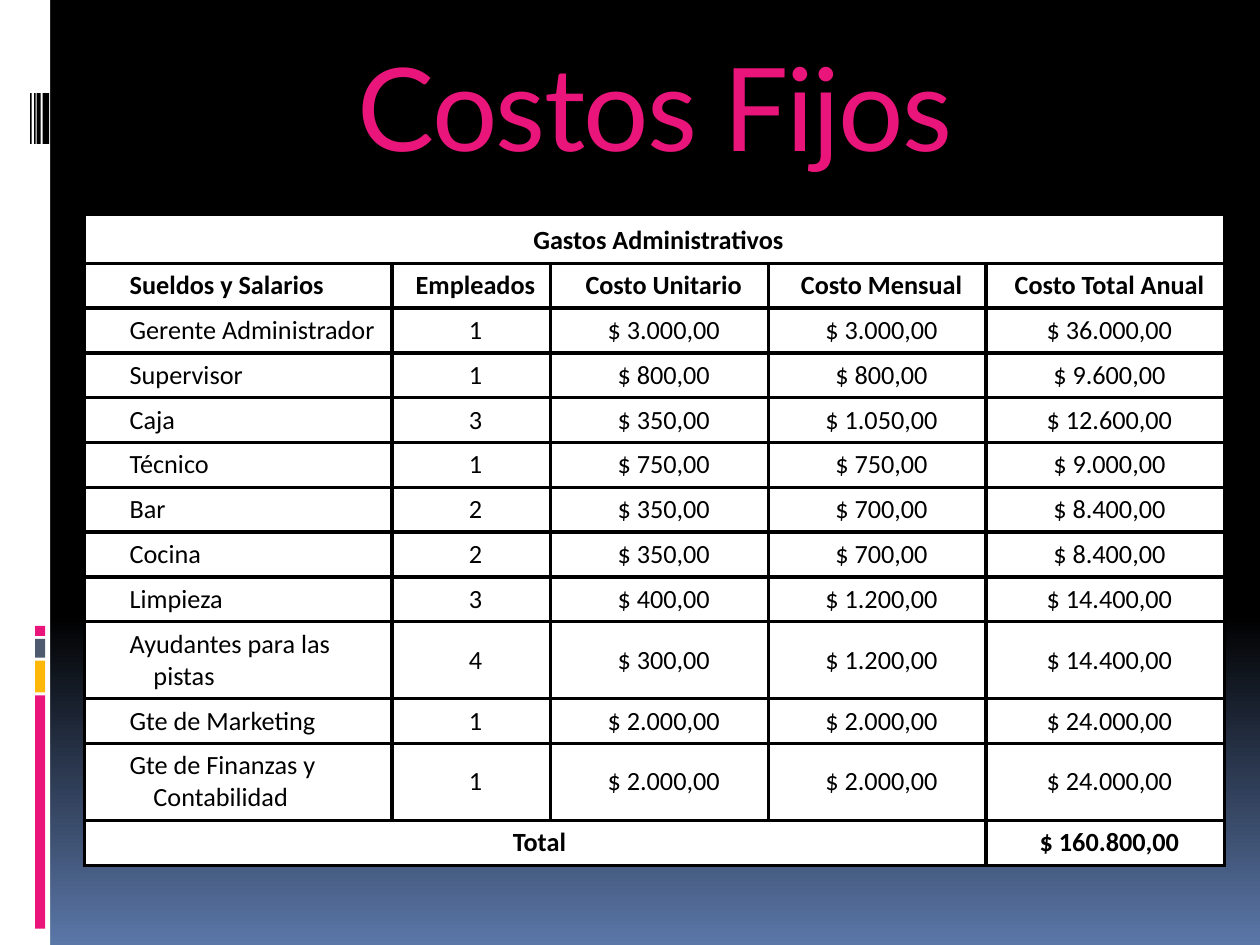
import copy

from lxml import etree
from pptx import Presentation
from pptx.dml.color import RGBColor
from pptx.enum import shapes, text
from pptx.oxml import ns
from pptx.util import Cm, Pt

COLORS = {
    "black": "000000",
    "white": "FFFFFF",
    "pink": "EA157A",
    "amber": "FEB80A",
    "slate": "4E5B6F",
    "blue": "5B77A8",
}

# Position name, number of employees, monthly cost of each one
STAFF = [
    ("Gerente Administrador", 1, 3000),
    ("Supervisor", 1, 800),
    ("Caja", 3, 350),
    ("Técnico", 1, 750),
    ("Bar", 2, 350),
    ("Cocina", 2, 350),
    ("Limpieza", 3, 400),
    ("Ayudantes para las pistas", 4, 300),
    ("Gte de Marketing", 1, 2000),
    ("Gte de Finanzas y Contabilidad", 1, 2000),
]
HEADERS = ["Sueldos y Salarios", "Empleados", "Costo Unitario",
           "Costo Mensual", "Costo Total Anual"]
COLUMN_WIDTHS = [6.2, 3.2, 4.39, 4.39, 4.8]


def color(name):
    return RGBColor.from_string(COLORS[name])


def money(amount):
    return f"$ {amount:,}".replace(",", ".") + ",00"


def paint_background(slide):
    fill = slide.background.fill
    fill.gradient()
    fill.gradient_angle = 270
    stop_list = slide.element.find(".//" + ns.qn("a:gsLst"))
    stop_list.append(copy.deepcopy(stop_list[-1]))
    stops = [(0, "black"), (0.65, "black"), (1, "blue")]
    for stop, (position, name) in zip(fill.gradient_stops, stops):
        stop.position = position
        stop.color.rgb = color(name)


def add_bar(slide, left, top, width, height, name):
    bar = slide.shapes.add_shape(shapes.MSO_SHAPE.RECTANGLE,
                                 Cm(left), Cm(top), Cm(width), Cm(height))
    bar.shadow.inherit = False
    bar.fill.solid()
    bar.fill.fore_color.rgb = color(name)
    bar.line.fill.background()


def add_sidebar(slide, left, top, width, height):
    add_bar(slide, left, top, width, height, "white")

    # Coloured blocks stacked with equal gaps
    block_top = top + 12.62
    for block_height, name in [(0.2, "pink"), (0.38, "slate"),
                               (0.64, "amber"), (4.7, "pink")]:
        add_bar(slide, left + 0.71, block_top, 0.2, block_height, name)
        block_top += block_height + 0.06

    # Black stripes of growing width
    for offset, stripe_width in [(0.61, 0.03), (0.69, 0.03),
                                 (0.74, 0.08), (0.86, 0.13)]:
        add_bar(slide, left + offset, top + 1.88, stripe_width, 1.02, "black")


def add_run(paragraph, words, font_name, size, name, bold=False):
    run = paragraph.add_run()
    run.text = words
    run.font.name = font_name
    run.font.size = Pt(size)
    run.font.bold = bold
    run.font.color.rgb = color(name)
    return run


def place_title(slide, left, top, width, height):
    title = slide.shapes.title
    title.left, title.top = Cm(left), Cm(top)
    title.width, title.height = Cm(width), Cm(height)
    frame = title.text_frame
    frame.word_wrap = True
    frame.auto_size = text.MSO_AUTO_SIZE.NONE
    frame.vertical_anchor = text.MSO_ANCHOR.MIDDLE
    paragraph = frame.paragraphs[0]
    paragraph.alignment = text.PP_ALIGN.CENTER
    run = add_run(paragraph, "Costos Fijos", "Lato", 66, "pink")
    run.font._element.set("spc", "-100")


def format_cell(cell):
    # The border lines must come before the fill
    properties = cell._tc.get_or_add_tcPr()
    for side in ("lnL", "lnR", "lnT", "lnB"):
        line = etree.SubElement(properties, ns.qn("a:" + side), w=str(Pt(2.25)))
        solid = etree.SubElement(line, ns.qn("a:solidFill"))
        etree.SubElement(solid, ns.qn("a:srgbClr"), val=COLORS["black"])
    cell.fill.solid()
    cell.fill.fore_color.rgb = color("white")
    cell.vertical_anchor = text.MSO_ANCHOR.MIDDLE


def write_cell(cell, words, bold=False, centered=True):
    paragraph = cell.text_frame.paragraphs[0]
    paragraph.alignment = (text.PP_ALIGN.CENTER if centered
                           else text.PP_ALIGN.LEFT)
    indents = paragraph._p.get_or_add_pPr()
    indents.set("marL", str(Cm(1.14)))
    indents.set("indent", str(Cm(-0.97 if centered else -0.48)))
    add_run(paragraph, words, "Calibri", 15, "black", bold)


def add_cost_table(slide, left, top):
    row_heights = [0.99] + [0.86] * (len(STAFF) + 2)
    table = slide.shapes.add_table(
        len(row_heights), len(COLUMN_WIDTHS), Cm(left), Cm(top),
        Cm(sum(COLUMN_WIDTHS)), Cm(sum(row_heights))).table
    table.first_row = table.horz_banding = False
    for column, width in zip(table.columns, COLUMN_WIDTHS):
        column.width = Cm(width)
    for row, height in zip(table.rows, row_heights):
        row.height = Cm(height)
    for cell in table.iter_cells():
        format_cell(cell)

    # Heading across all columns
    heading = table.cell(0, 0)
    heading.merge(table.cell(0, 4))
    heading.vertical_anchor = text.MSO_ANCHOR.BOTTOM
    write_cell(heading, "Gastos Administrativos", bold=True)

    # Column headers and one row for each position
    lines = [HEADERS]
    for position, count, unit_cost in STAFF:
        monthly = count * unit_cost
        lines.append([position, str(count), money(unit_cost),
                      money(monthly), money(monthly * 12)])
    for row_index, line in enumerate(lines, start=1):
        for column_index, words in enumerate(line):
            write_cell(table.cell(row_index, column_index), words,
                       bold=row_index == 1, centered=column_index > 0)

    # Total row
    last = len(row_heights) - 1
    table.cell(last, 0).merge(table.cell(last, 3))
    total = sum(count * unit_cost * 12 for _, count, unit_cost in STAFF)
    write_cell(table.cell(last, 0), "Total", bold=True)
    write_cell(table.cell(last, 4), money(total), bold=True)


def main():
    presentation = Presentation()
    presentation.slide_width, presentation.slide_height = Cm(25.4), Cm(19.05)
    slide = presentation.slides.add_slide(presentation.slide_layouts[5])
    paint_background(slide)
    add_sidebar(slide, 0, 0, 1.01, 19.05)
    place_title(slide, 2.31, 0.53, 21.8, 3.2)
    add_cost_table(slide, 1.7, 4.32)
    presentation.save("out.pptx")


if __name__ == "__main__":
    main()
